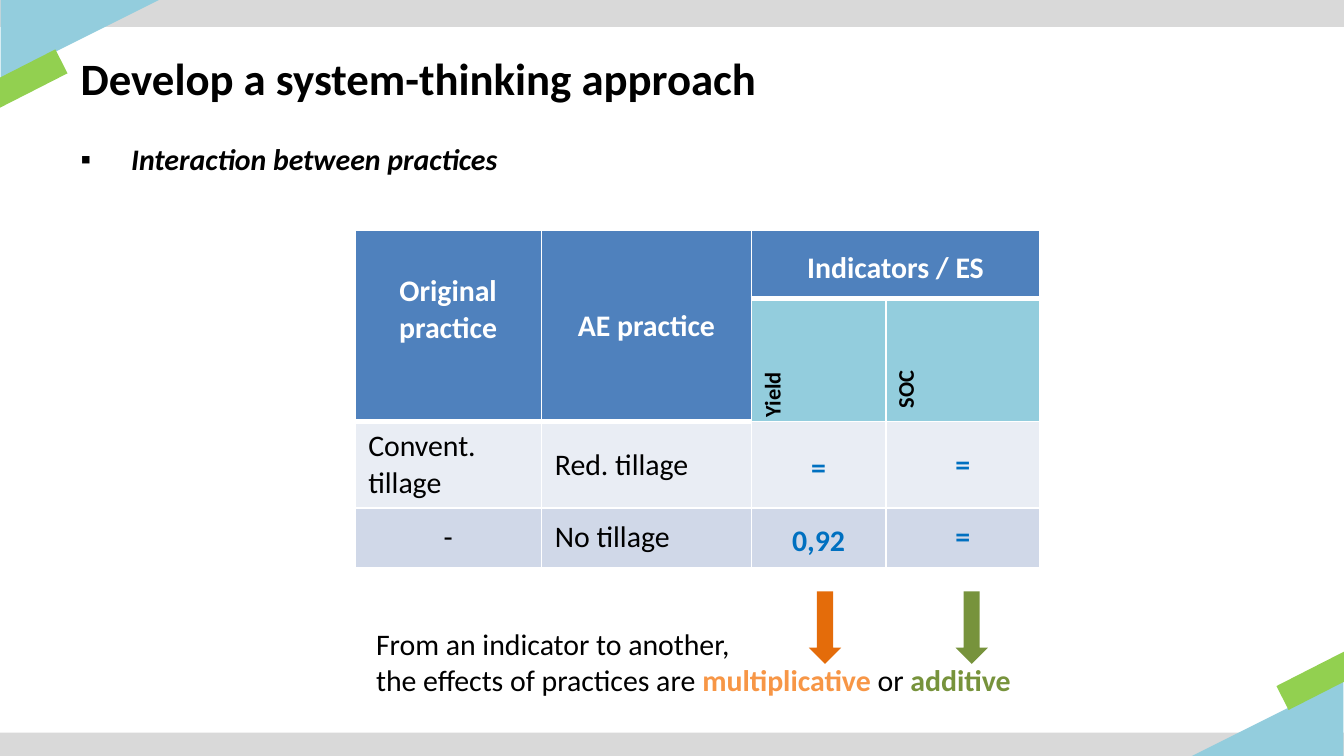
from lxml import etree
from pptx import Presentation
from pptx import util as u
from pptx.dml.color import RGBColor
from pptx.enum import shapes, text
from pptx.oxml.ns import qn

Pt = u.Pt
THEME = {
    "font": "Calibri", "title": 24, "body": 16, "small": 12,
    "black": "000000", "white": "FFFFFF", "gray": "D9D9D9",
    "sky": "93CDDD", "lime": "92D050", "header": "4F81BD",
    "light": "E9EDF4", "dark": "D0D8E8", "value": "0070C0",
    "orange": "E46C0A", "peach": "F79646", "olive": "77933C",
}
SLIDE_W, SLIDE_H = 720, 405
MIRROR_H = 406.8

TITLE = "Develop a system-thinking approach"
TOPIC = "Interaction between practices"
CONCLUSION = [
    [("From an indicator to another,", "black", False)],
    [("the effects of practices are ", "black", False),
     ("multiplicative ", "peach", True),
     ("or ", "black", False),
     ("additive", "olive", True)],
]

HEADER = {"color": "white", "bold": True, "align": "CENTER", "fill": "header"}
INDICATOR = {"color": "black", "bold": True, "size": "small", "fill": "sky", "vertical": True}
PRACTICE = {"color": "black"}
EFFECT = {"color": "value", "bold": True, "align": "CENTER"}
TIGHT = {"tight": True}
LOOSE = {"spacing": 1.2, "tight": True}
BANDS = {2: {"fill": "light"}, 3: {"fill": "dark"}}

COLUMNS = [100, 112.5, 72, 82.5]
ROWS = [36.7, 59.8, 45.4, 31.7]
MERGES = [((0, 0), (1, 0)), ((0, 1), (1, 1)), ((0, 2), (0, 3))]
CELLS = [
    (0, 0, "Original practice", {**HEADER, "top": 23.1}),
    (0, 1, "AE practice", {**HEADER, **TIGHT}),
    (0, 2, "Indicators / ES", {**HEADER, **LOOSE}),
    (1, 2, "Yield", {**INDICATOR, **LOOSE, "align": "JUSTIFY"}),
    (1, 3, "SOC", INDICATOR),
    (2, 0, "Convent. tillage", PRACTICE),
    (2, 1, "Red. tillage", PRACTICE),
    (2, 2, "=", {**EFFECT, **LOOSE}),
    (2, 3, "=", EFFECT),
    (3, 0, "-", {**PRACTICE, "align": "CENTER"}),
    (3, 1, "No tillage", PRACTICE),
    (3, 2, "0,92", {**EFFECT, **LOOSE}),
    (3, 3, "=", EFFECT),
]

CORNER = [
    ("RECTANGLE", 0, 0, SLIDE_W, 14.4, 0, "gray"),
    ("ISOSCELES_TRIANGLE", 21.6, -21.4, 42.5, 85, 90, "sky"),
    ("RECTANGLE", -7.2, 35.3, 42.5, 14.4, 333, "lime"),
]
ARROWS = [(433.4, "orange"), (511.9, "olive")]


def rgb(name):
    return RGBColor.from_string(THEME[name])


def place(part, left, top, width, height):
    part.left, part.top, part.width, part.height = map(Pt, (left, top, width, height))


def add_run(paragraph, words, color="black", bold=False, size="body", italic=False):
    run = paragraph.add_run()
    run.text = words
    run.font.name = THEME["font"]
    run.font.size = Pt(THEME[size])
    run.font.bold = bold
    run.font.italic = italic
    run.font.color.rgb = rgb(color)


def add_solid(slide, preset, left, top, width, height, turn, color):
    solid = slide.shapes.add_shape(
        getattr(shapes.MSO_SHAPE, preset), *map(Pt, (left, top, width, height)))
    solid.shadow.inherit = False
    solid.fill.solid()
    solid.fill.fore_color.rgb = rgb(color)
    solid.line.fill.background()
    solid.rotation = turn
    if preset == "ISOSCELES_TRIANGLE":
        solid.adjustments[0] = 0


def add_borders(cell, bottom):
    properties = cell._tc.get_or_add_tcPr()
    for position, (side, width) in enumerate(
            [("lnL", 1), ("lnR", 1), ("lnT", 1), ("lnB", bottom)]):
        edge = etree.Element(qn(f"a:{side}"), w=str(Pt(width)))
        fill = etree.SubElement(edge, qn("a:solidFill"))
        etree.SubElement(fill, qn("a:srgbClr"), val=THEME["white"])
        properties.insert(position, edge)


def fill_cell(cell, words, look):
    if look.get("tight"):
        cell.margin_left = cell.margin_right = Pt(2.2)
        cell.margin_top = cell.margin_bottom = Pt(1.4)
    if "top" in look:
        cell.margin_top = Pt(look["top"])
        cell.vertical_anchor = text.MSO_ANCHOR.TOP
    else:
        cell.vertical_anchor = text.MSO_ANCHOR.MIDDLE
    if look.get("vertical"):
        cell._tc.get_or_add_tcPr().set("vert", "vert270")
    paragraph = cell.text_frame.paragraphs[0]
    paragraph.alignment = getattr(text.PP_ALIGN, look.get("align", "LEFT"))
    paragraph.line_spacing = look.get("spacing", 1.0)
    add_run(paragraph, words, look["color"], look.get("bold", False), look.get("size", "body"))
    cell.fill.solid()
    cell.fill.fore_color.rgb = rgb(look["fill"])


def add_effects_table(slide):
    table = slide.shapes.add_table(
        len(ROWS), len(COLUMNS), Pt(190.1), Pt(123.4),
        Pt(sum(COLUMNS)), Pt(sum(ROWS))).table
    table.first_row = table.horz_banding = False
    for column, width in zip(table.columns, COLUMNS):
        column.width = Pt(width)
    for row, height in zip(table.rows, ROWS):
        row.height = Pt(height)
    for first, last in MERGES:
        table.cell(*first).merge(table.cell(*last))
    for row, column, words, look in CELLS:
        fill_cell(table.cell(row, column), words, {**BANDS.get(row, {}), **look})
    for row in range(len(ROWS)):
        for column in range(len(COLUMNS)):
            under_header = row == 0 or (row == 1 and column < 2)
            add_borders(table.cell(row, column), 3 if under_header else 1)


def add_heading(slide):
    title, topic = slide.shapes.title, slide.placeholders[1]
    for part, box in [(title, (36, 16.6, 648, 50.4)), (topic, (36, 72, 648, 289.4))]:
        place(part, *box)
        part.text_frame.auto_size = text.MSO_AUTO_SIZE.NONE
        part.element.getparent().append(part.element)
    title.text_frame.vertical_anchor = text.MSO_ANCHOR.MIDDLE
    heading = title.text_frame.paragraphs[0]
    heading.alignment = text.PP_ALIGN.LEFT
    add_run(heading, TITLE, bold=True, size="title")
    item = topic.text_frame.paragraphs[0]
    add_run(item, TOPIC, bold=True, italic=True)
    properties = item._p.get_or_add_pPr()
    properties.set("marL", str(Pt(27)))
    properties.set("indent", str(Pt(-27)))
    etree.SubElement(properties, qn("a:buChar"), char="▪")


def add_conclusion(slide):
    box = slide.shapes.add_textbox(*map(Pt, (194.4, 331.9, 375.8, 46.1)))
    box.text_frame.word_wrap = False
    paragraph = box.text_frame.paragraphs[0]
    for number, line in enumerate(CONCLUSION):
        if number:
            paragraph.add_line_break()
        for words, color, bold in line:
            add_run(paragraph, words, color, bold)


def main():
    deck = Presentation()
    deck.slide_width, deck.slide_height = Pt(SLIDE_W), Pt(SLIDE_H)
    slide = deck.slides.add_slide(deck.slide_layouts[1])
    for preset, left, top, width, height, turn, color in CORNER:
        add_solid(slide, preset, left, top, width, height, turn, color)
        add_solid(slide, preset, SLIDE_W - left - width, MIRROR_H - top - height,
                  width, height, (turn + 180) % 360, color)
    add_heading(slide)
    add_effects_table(slide)
    add_conclusion(slide)
    for left, color in ARROWS:
        add_solid(slide, "DOWN_ARROW", left, 316.8, 17.3, 38.9, 0, color)
    deck.save("out.pptx")


if __name__ == "__main__":
    main()
